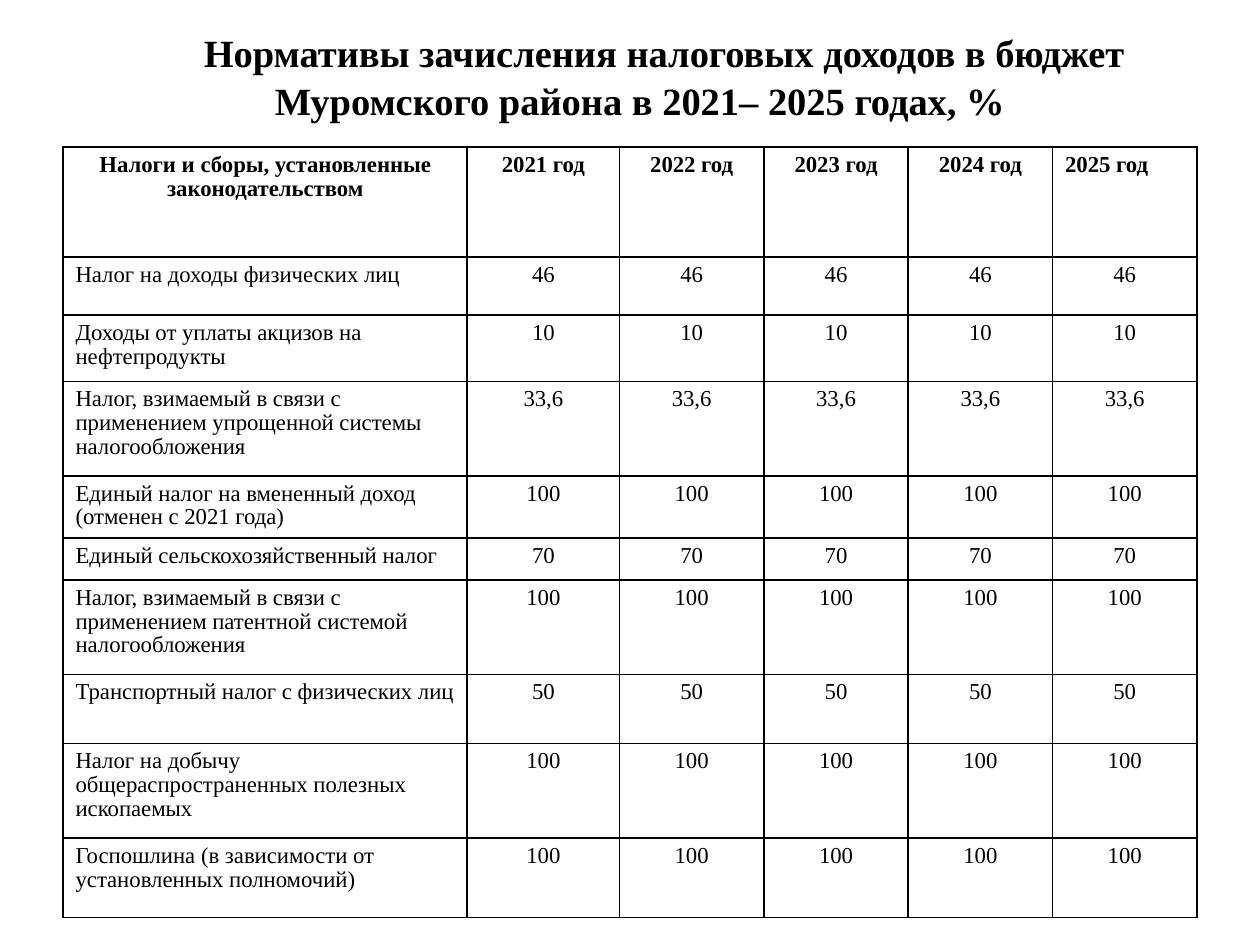
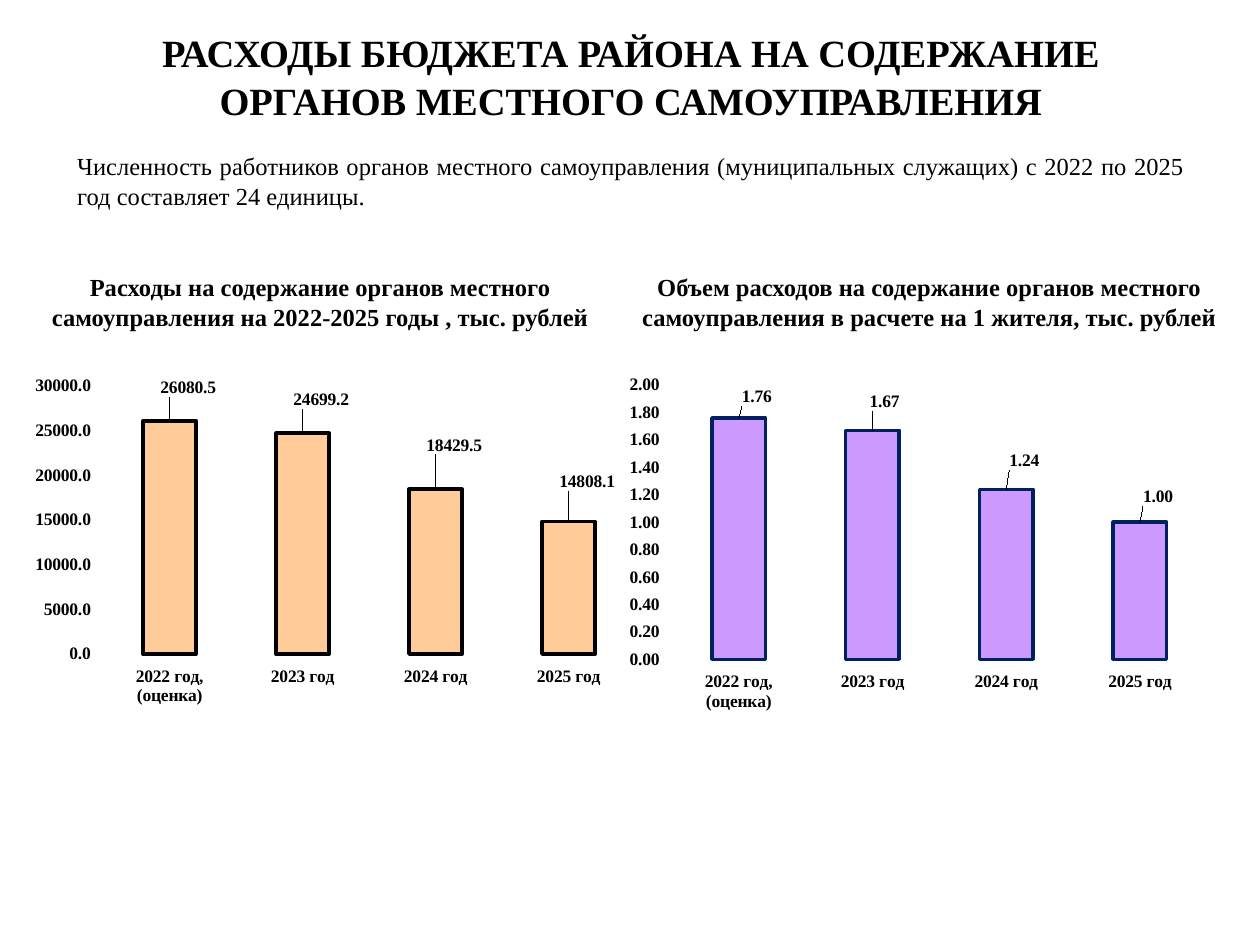
from lxml import etree
from pptx import Presentation
from pptx.chart.data import CategoryChartData
from pptx.dml.color import RGBColor
from pptx.enum.chart import XL_CHART_TYPE, XL_LABEL_POSITION, XL_TICK_MARK
from pptx.enum.text import MSO_ANCHOR, MSO_AUTO_SIZE, PP_ALIGN
from pptx.oxml import parse_xml
from pptx.oxml.ns import nsdecls, qn
from pptx.util import Pt

BLACK = RGBColor(0x00, 0x00, 0x00)
WHITE = RGBColor(0xFF, 0xFF, 0xFF)
PEACH = RGBColor(0xFF, 0xCC, 0x99)
VIOLET = RGBColor(0xCC, 0x99, 0xFF)
NAVY = RGBColor(0x00, 0x20, 0x60)
FONT = "Times New Roman"
TITLE_LAYOUT = 5


def write(frame, text, size, bold=False, align=PP_ALIGN.LEFT, spacing=1.04):
    """Fill a text frame with one formatted paragraph."""
    frame.word_wrap = True
    frame.vertical_anchor = MSO_ANCHOR.TOP
    para = frame.paragraphs[0]
    para.alignment = align
    para.line_spacing = spacing
    para.space_before = Pt(0)
    span = para.add_run()
    span.text = text
    span.font.name = FONT
    span.font.size = Pt(size)
    span.font.bold = bold
    span.font.color.rgb = BLACK
    return para


def add_titled_page(deck, text, left):
    """Add a page with the shared title style."""
    page = deck.slides.add_slide(deck.slide_layouts[TITLE_LAYOUT])
    page.background.fill.solid()
    page.background.fill.fore_color.rgb = WHITE
    title = page.shapes.title
    title.left, title.top, title.width, title.height = Pt(left), Pt(12), Pt(647), Pt(72)
    title.text_frame.auto_size = MSO_AUTO_SIZE.NONE
    para = write(title.text_frame, text, 22, True, PP_ALIGN.CENTER)
    return page, para


deck = Presentation()
deck.slide_width, deck.slide_height = Pt(720), Pt(540)

# Page 1: tax rates
page, title_para = add_titled_page(
    deck,
    "Нормативы зачисления налоговых доходов в бюджет Муромского района в 2021– 2025 годах, %",
    42)
title_para._p.get_or_add_pPr().set("indent", str(Pt(28)))

YEARS = [f"{year} год" for year in range(2021, 2026)]
# Tax name, rate for every year, row height
TAXES = [
    ("Налог на доходы физических лиц", "46", 33),
    ("Доходы от уплаты акцизов на нефтепродукты", "10", 38),
    ("Налог, взимаемый в связи с применением упрощенной системы налогообложения", "33,6", 54),
    ("Единый налог на вмененный доход (отменен с 2021 года)", "100", 35.5),
    ("Единый сельскохозяйственный налог", "70", 24),
    ("Налог, взимаемый в связи с применением патентной системой налогообложения", "100", 54),
    ("Транспортный налог с физических лиц", "50", 39.5),
    ("Налог на добычу общераспространенных полезных ископаемых", "100", 54),
    ("Госпошлина (в зависимости от установленных полномочий)", "100", 45.5),
]
COLUMN_WIDTHS = [231, 87, 82.5, 82.5, 82.5, 82.5]
HEADER = ["Налоги и сборы, установленные законодательством"] + YEARS
rows = [HEADER] + [[name] + [rate] * len(YEARS) for name, rate, _ in TAXES]
row_heights = [63] + [height for _, _, height in TAXES]

table = page.shapes.add_table(
    len(rows), len(HEADER), Pt(36), Pt(84),
    Pt(sum(COLUMN_WIDTHS)), Pt(sum(row_heights))).table
table.first_row = table.horz_banding = False
for column, width in zip(table.columns, COLUMN_WIDTHS):
    column.width = Pt(width)

for r, (texts, height) in enumerate(zip(rows, row_heights)):
    table.rows[r].height = Pt(height)
    for c, text in enumerate(texts):
        cell = table.cell(r, c)
        left_aligned = (c == 0 and r > 0) or (r == 0 and c == len(HEADER) - 1)
        align = PP_ALIGN.LEFT if left_aligned else PP_ALIGN.CENTER
        write(cell.text_frame, text, 13, r == 0, align, 0.95)
        cell.vertical_anchor = MSO_ANCHOR.TOP
        # Borders come before the fill in the cell properties
        properties = cell._tc.get_or_add_tcPr()
        for side in ("lnL", "lnR", "lnT", "lnB"):
            properties.append(parse_xml(
                f'<a:{side} {nsdecls("a")} w="{Pt(1)}"><a:solidFill>'
                f'<a:srgbClr val="{BLACK}"/></a:solidFill></a:{side}>'))
        cell.fill.solid()
        cell.fill.fore_color.rgb = WHITE

# Page 2: cost of local government
page, _ = add_titled_page(
    deck, "РАСХОДЫ БЮДЖЕТА РАЙОНА НА СОДЕРЖАНИЕ ОРГАНОВ МЕСТНОГО САМОУПРАВЛЕНИЯ", 37)

TEXTS = [
    ("Численность работников органов местного самоуправления (муниципальных служащих) "
     "с 2022 по 2025 год составляет 24 единицы.", 37, 82, 647, False, PP_ALIGN.JUSTIFY),
    ("Расходы на содержание органов местного самоуправления на 2022-2025 годы , тыс. рублей",
     13, 151, 340, True, PP_ALIGN.CENTER),
    ("Объем расходов на содержание органов местного самоуправления в расчете на 1 жителя, "
     "тыс. рублей", 353, 151, 356, True, PP_ALIGN.CENTER),
]
for text, left, top, width, bold, align in TEXTS:
    box = page.shapes.add_textbox(Pt(left), Pt(top), Pt(width), Pt(41))
    write(box.text_frame, text, 14, bold, align)

# Charts: plot is x, y, w, h and shifts move each label, as shares of the chart
CHARTS = [
    dict(frame=(13, 210, 353.5, 210), values=(26080.5, 24699.2, 18429.5, 14808.1),
         fill=PEACH, line=BLACK, axis_format="0.0", label_format="0.0",
         top=30000, step=5000, plot=(0.13, 0.05, 0.86, 0.73),
         shifts=[(0.03, -0.05), (0.03, -0.05), (0.03, -0.08), (0.03, -0.07)]),
    dict(frame=(353, 210, 343.5, 201), values=(1.76, 1.67, 1.24, 1.00),
         fill=VIOLET, line=NAVY, axis_format="0.00", label_format="#,##0.00",
         top=2, step=0.2, plot=(0.09, 0.05, 0.89, 0.78),
         shifts=[(0.03, -0.02), (0.02, -0.04), (0.03, -0.04), (0.03, -0.03)]),
]
for item in CHARTS:
    data = CategoryChartData()
    data.categories = ["2022 год, (оценка)"] + YEARS[2:]
    data.add_series("Расходы", item["values"])
    chart = page.shapes.add_chart(
        XL_CHART_TYPE.COLUMN_CLUSTERED, *[Pt(length) for length in item["frame"]], data).chart
    chart.has_legend = chart.has_title = False
    chart.font.name, chart.font.size, chart.font.bold = FONT, Pt(10), True
    chart.font.color.rgb = BLACK

    # Axes
    for axis in (chart.category_axis, chart.value_axis):
        axis.major_tick_mark = XL_TICK_MARK.OUTSIDE
        axis.format.line.color.rgb = WHITE
        axis.format.line.width = Pt(0.25)
    axis = chart.value_axis
    axis.minimum_scale, axis.maximum_scale, axis.major_unit = 0, item["top"], item["step"]
    axis.major_gridlines.format.line.color.rgb = WHITE
    axis.major_gridlines.format.line.width = Pt(0.25)
    axis.tick_labels.number_format = item["axis_format"]
    axis.tick_labels.number_format_is_linked = False

    # Columns
    plot = chart.plots[0]
    plot.gap_width = 150
    plot.vary_by_categories = False
    series = plot.series[0]
    series.format.fill.solid()
    series.format.fill.fore_color.rgb = item["fill"]
    series.format.line.color.rgb = item["line"]
    series.format.line.width = Pt(2)

    # Value labels
    labels = series.data_labels
    labels.show_value = True
    labels.number_format = item["label_format"]
    labels.number_format_is_linked = False
    labels.position = XL_LABEL_POSITION.OUTSIDE_END
    labels.font.name, labels.font.size, labels.font.bold = FONT, Pt(10), True
    labels.font.color.rgb = BLACK
    for index, (x, y) in reversed(list(enumerate(item["shifts"]))):
        labels._element.insert(0, parse_xml(
            f'<c:dLbl {nsdecls("c")}><c:idx val="{index}"/><c:layout><c:manualLayout>'
            f'<c:x val="{x}"/><c:y val="{y}"/></c:manualLayout></c:layout>'
            f'<c:numFmt formatCode="{item["label_format"]}" sourceLinked="0"/>'
            '<c:dLblPos val="outEnd"/><c:showLegendKey val="0"/><c:showVal val="1"/>'
            '<c:showCatName val="0"/><c:showSerName val="0"/><c:showPercent val="0"/>'
            '<c:showBubbleSize val="0"/></c:dLbl>'))

    # Place of the plot area
    plot_area = chart._chartSpace.chart.plotArea
    for old_layout in plot_area.findall(qn("c:layout")):
        plot_area.remove(old_layout)
    layout = etree.Element(qn("c:layout"))
    manual = etree.SubElement(layout, qn("c:manualLayout"))
    settings = [("layoutTarget", "inner"), ("xMode", "edge"), ("yMode", "edge")]
    for tag, value in settings + list(zip("xywh", item["plot"])):
        etree.SubElement(manual, qn(f"c:{tag}")).set("val", str(value))
    plot_area.insert(0, layout)

deck.save("out.pptx")
